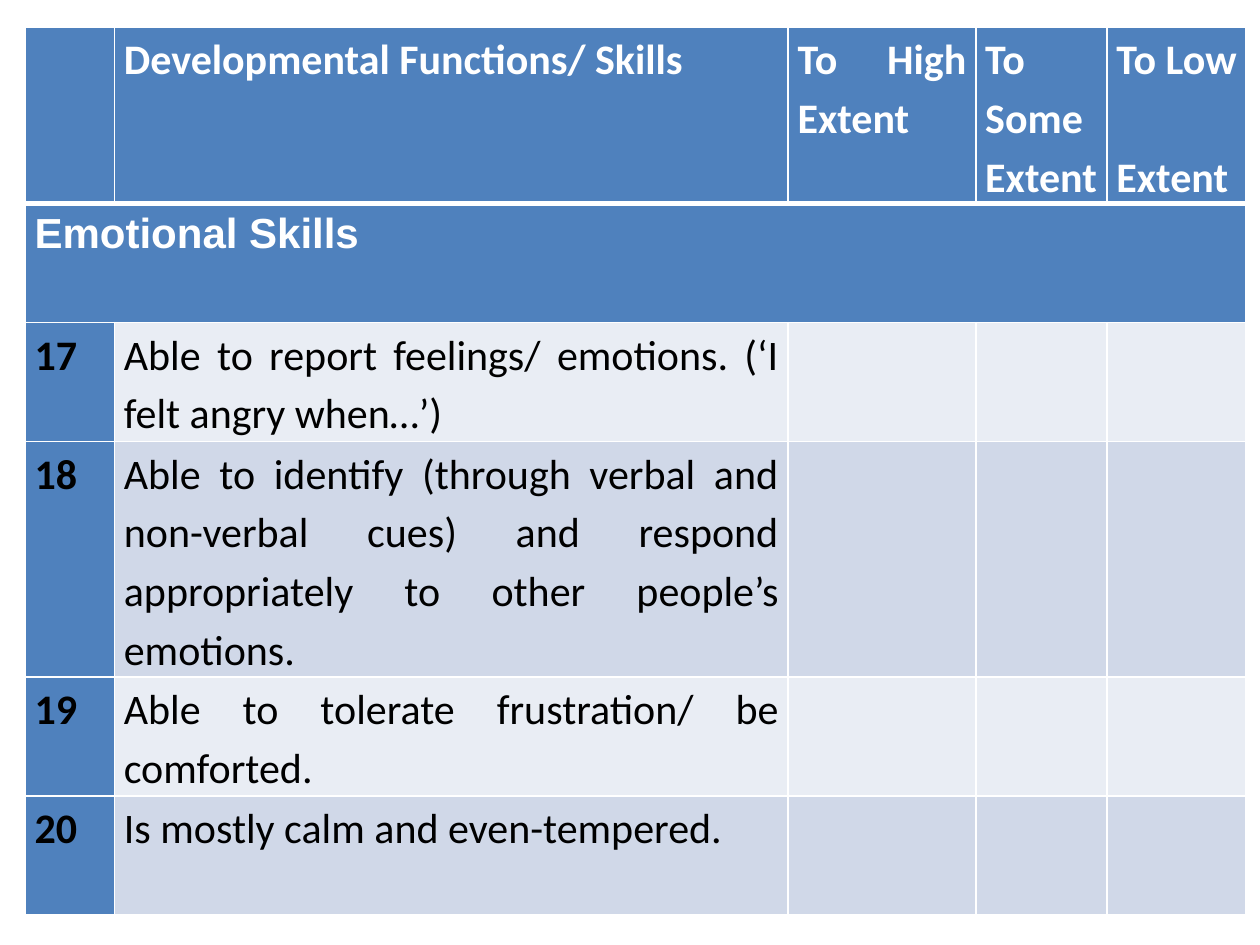
from lxml import etree
from pptx import Presentation
from pptx.dml.color import RGBColor
from pptx.enum import text
from pptx.oxml import ns
from pptx.util import Pt

WHITE = RGBColor(0xFF, 0xFF, 0xFF)
BLACK = RGBColor(0x00, 0x00, 0x00)
BLUE = RGBColor(0x4F, 0x81, 0xBD)
BANDS = RGBColor(0xE9, 0xED, 0xF4), RGBColor(0xD0, 0xD8, 0xE8)

COLUMN_WIDTHS = 51, 385, 107.25, 75, 79.5
ROW_HEIGHTS = 100, 68, 68, 134.5, 68, 68
LINE_PITCH = 33.7

HEADINGS = "", "Developmental Functions/ Skills", "To High Extent", "To Some Extent", "To Low\nExtent"
SECTION = "Emotional Skills"
FIRST_NUMBER = 17
SKILLS = (
    "Able to report feelings/ emotions. (‘I felt angry when…’)",
    "Able to identify (through verbal and non-verbal cues) and respond appropriately to other people’s emotions.",
    "Able to tolerate frustration/ be comforted.",
    "Is mostly calm and even-tempered.",
)


def write_text(cell, content, font="Calibri", color=BLACK, bold=True):
    """Write justified text in a cell, with a line's gap between its paragraphs."""
    frame = cell.text_frame
    frame.text = content
    for index, paragraph in enumerate(frame.paragraphs):
        paragraph.alignment = text.PP_ALIGN.JUSTIFY
        paragraph.line_spacing = 1.15
        paragraph.space_before = Pt(LINE_PITCH if index else 0)
        for run in paragraph.runs:
            run.font.name = font
            run.font.size = Pt(24)
            run.font.bold = bold
            run.font.color.rgb = color


def style_cell(cell, fill, top=1, bottom=1):
    """Give a cell its margins, white borders and fill."""
    cell.margin_left = cell.margin_right = Pt(5.4)
    cell.margin_top = cell.margin_bottom = 0
    properties = cell._tc.get_or_add_tcPr()
    for side, width in (("L", 1), ("R", 1), ("T", top), ("B", bottom)):
        line = etree.SubElement(properties, ns.qn(f"a:ln{side}"), w=str(Pt(width)))
        solid = etree.SubElement(line, ns.qn("a:solidFill"))
        etree.SubElement(solid, ns.qn("a:srgbClr"), val=str(WHITE))
    cell.fill.solid()
    cell.fill.fore_color.rgb = fill


def add_skills_table(slide, left, top):
    """Add the checklist of skills with its top left corner at the given point."""
    shape = slide.shapes.add_table(
        len(ROW_HEIGHTS), len(COLUMN_WIDTHS), Pt(left), Pt(top),
        Pt(sum(COLUMN_WIDTHS)), Pt(sum(ROW_HEIGHTS)))
    table = shape.table
    for column, width in zip(table.columns, COLUMN_WIDTHS):
        column.width = Pt(width)
    for row, height in zip(table.rows, ROW_HEIGHTS):
        row.height = Pt(height)

    for column, heading in enumerate(HEADINGS):
        style_cell(table.cell(0, column), BLUE, bottom=3)
        write_text(table.cell(0, column), heading, color=WHITE)
        style_cell(table.cell(1, column), BLUE, top=3)
    table.cell(1, 0).merge(table.cell(1, len(HEADINGS) - 1))
    write_text(table.cell(1, 0), SECTION, font="Arial", color=WHITE)

    for index, skill in enumerate(SKILLS):
        cells = table.rows[index + 2].cells
        for column, cell in enumerate(cells):
            style_cell(cell, BANDS[index % 2] if column else BLUE)
        write_text(cells[0], str(FIRST_NUMBER + index))
        write_text(cells[1], skill, bold=False)


def main():
    """Build the slide and save it."""
    presentation = Presentation()
    presentation.slide_width = Pt(720)
    presentation.slide_height = Pt(540)
    slide = presentation.slides.add_slide(presentation.slide_layouts[6])
    add_skills_table(slide, 14.4, 15.3)
    presentation.save("out.pptx")


if __name__ == "__main__":
    main()
